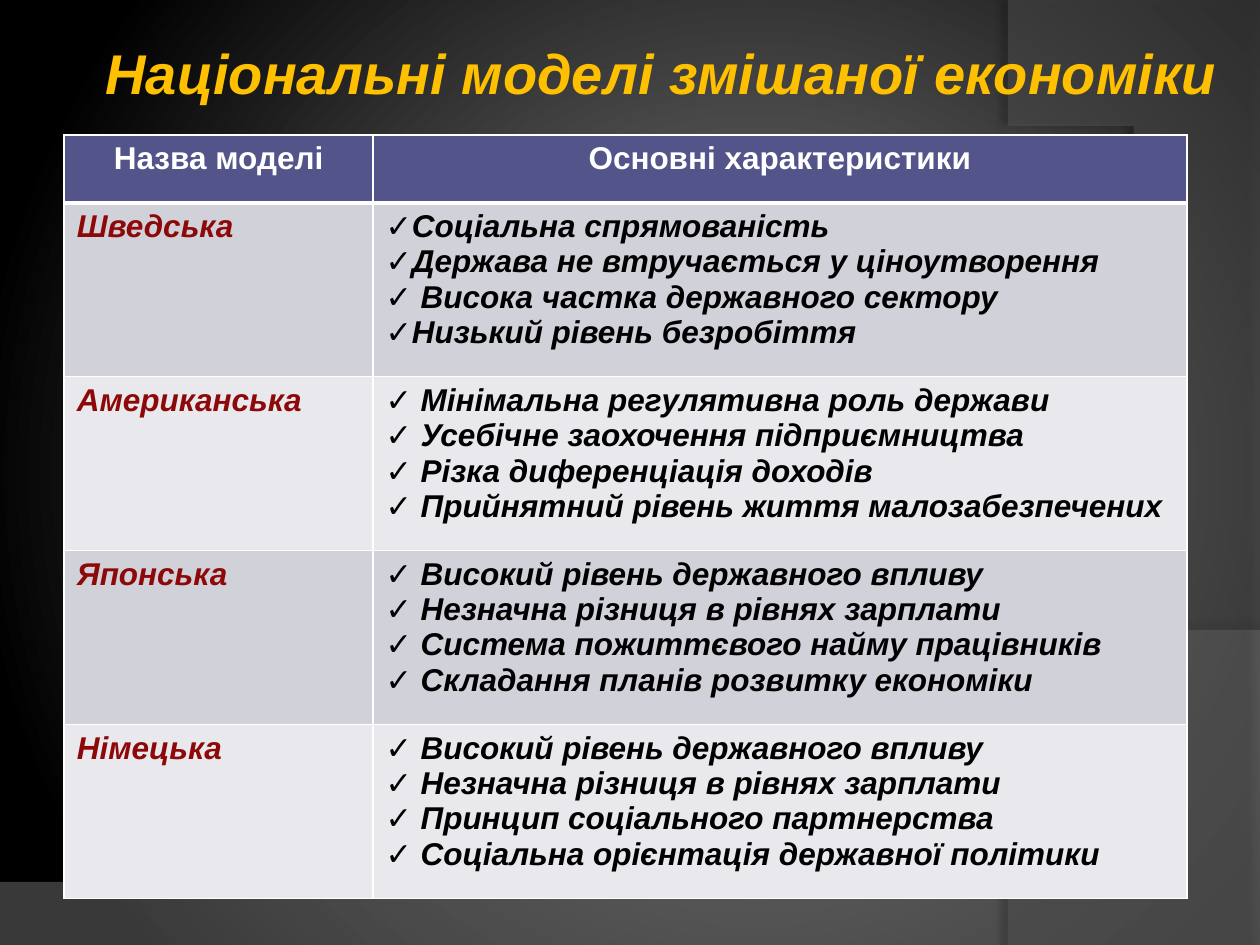
from lxml import etree
from pptx import Presentation
from pptx.dml.color import RGBColor
from pptx.enum.text import MSO_ANCHOR, PP_ALIGN
from pptx.oxml.ns import qn
from pptx.util import Inches, Pt

CENTER, LEFT = PP_ALIGN.CENTER, PP_ALIGN.LEFT
MIDDLE = MSO_ANCHOR.MIDDLE
FONT = "Arial"
COLORS = {
    "glow": "848484", "black": "000000", "wave": "7F7F7F", "arc": "5E5E5E",
    "title": "FFC000", "header": "53548A", "white": "FFFFFF",
    "model": "8D0909", "odd": "D1D1DA", "even": "E9E9ED",
}
HEADERS = ["Назва моделі", "Основні характеристики"]
MODELS = [
    ("Шведська", ["Соціальна спрямованість",
                  "Держава не втручається у ціноутворення",
                  " Висока частка державного сектору",
                  "Низький рівень безробіття"]),
    ("Американська", [" Мінімальна регулятивна роль держави",
                      " Усебічне заохочення підприємництва",
                      " Різка диференціація доходів",
                      " Прийнятний рівень життя малозабезпечених"]),
    ("Японська", [" Високий рівень державного впливу",
                  " Незначна різниця в рівнях зарплати",
                  " Система пожиттєвого найму працівників",
                  " Складання планів розвитку економіки"]),
    ("Німецька", [" Високий рівень державного впливу",
                  " Незначна різниця в рівнях зарплати",
                  " Принцип соціального партнерства",
                  " Соціальна орієнтація державної політики"]),
]


def rgb(name):
    return RGBColor.from_string(COLORS[name])


def add_xml(parent, tag, **attributes):
    values = {key: str(value) for key, value in attributes.items()}
    return etree.SubElement(parent, qn(tag), values)


def write_text(frame, lines, color, size=18, italic=False, align=LEFT, bullet=None):
    for index, line in enumerate(lines):
        para = frame.paragraphs[0] if index == 0 else frame.add_paragraph()
        para.alignment = align
        span = para.add_run()
        span.text = line
        span.font.name, span.font.size = FONT, Pt(size)
        span.font.bold, span.font.italic = True, italic
        span.font.color.rgb = rgb(color)
        if bullet:
            properties = para._p.get_or_add_pPr()
            add_xml(properties, "a:buFont", typeface=FONT)
            add_xml(properties, "a:buChar", char=bullet)


def curve(start, control_1, control_2, end, steps=40):
    """Points along a cubic curve, without its start."""
    points = []
    for step in range(1, steps + 1):
        t = step / steps
        weights = ((1 - t) ** 3, 3 * t * (1 - t) ** 2, 3 * t * t * (1 - t), t ** 3)
        corners = (start, control_1, control_2, end)
        points.append(tuple(sum(w * corner[axis] for w, corner in zip(weights, corners))
                            for axis in (0, 1)))
    return points


def add_sweep(page, points, color, opacity, shadow_opacity, blur, distance, direction):
    builder = page.shapes.build_freeform(*points[0], scale=float(Inches(1)))
    builder.add_line_segments(points[1:], close=True)
    shape = builder.convert_to_shape()
    shape.fill.solid()
    shape.fill.fore_color.rgb = rgb(color)
    shape.line.fill.background()
    fill_color = shape._element.spPr.find(qn("a:solidFill"))[0]
    add_xml(fill_color, "a:alpha", val=opacity * 1000)
    effects = add_xml(shape._element.spPr, "a:effectLst")
    shadow = add_xml(effects, "a:outerShdw", blurRad=Pt(blur), dist=Pt(distance),
                     dir=direction * 60000, algn="ctr", rotWithShape=0)
    shadow_color = add_xml(shadow, "a:srgbClr", val=COLORS["black"])
    add_xml(shadow_color, "a:alpha", val=shadow_opacity * 1000)


def draw_background(page, width, height):
    # Radial glow
    fill = page.background.fill
    fill.gradient()
    for stop, color, position in zip(fill.gradient_stops, ("glow", "black"), (0, 1)):
        stop.color.rgb = rgb(color)
        stop.position = position
    gradient = page._element.find(".//" + qn("a:gradFill"))
    gradient.remove(gradient.find(qn("a:lin")))
    circle = etree.Element(qn("a:path"), {"path": "circle"})
    gradient.find(qn("a:gsLst")).addnext(circle)
    add_xml(circle, "a:fillToRect", l=60000, t=50000, r=40000, b=50000)

    # Bottom wave and right-hand arc
    wave = [(0, 7.05), (0, height), (width, height), (width, 5.2)]
    wave += curve((width, 5.2), (5.59, 7.29), (3.91, 7.19), (0, 7.05))
    add_sweep(page, wave, "wave", 45, 35, 4, 3.5, 270)
    arc = [(width, 0.02), (width, height), (8.21, height)]
    arc += curve((8.21, height), (9.35, 6.19), (10.18, 3), (8, 0))
    add_sweep(page, arc, "arc", 40, 45, 4, 4, 180)


def place_title(page, left, top, width, height):
    title = page.shapes.title
    title.left, title.top = Inches(left), Inches(top)
    title.width, title.height = Inches(width), Inches(height)
    frame = title.text_frame
    frame.vertical_anchor, frame.word_wrap = MIDDLE, True
    frame.margin_left = frame.margin_right = Inches(0.05)
    frame.margin_top = frame.margin_bottom = Inches(0.05)
    write_text(frame, ["Національні моделі змішаної економіки"], "title",
               size=32, italic=True, align=CENTER)
    page.shapes._spTree.append(title._element)  # in front of the sweeps


def style_cell(cell, fill, top=1, bottom=1):
    properties = cell._tc.get_or_add_tcPr()
    for side, weight in (("L", 1), ("R", 1), ("T", top), ("B", bottom)):
        line = add_xml(properties, "a:ln" + side, w=Pt(weight))
        add_xml(add_xml(line, "a:solidFill"), "a:srgbClr", val=COLORS["white"])
    cell.fill.solid()
    cell.fill.fore_color.rgb = rgb(fill)


def place_table(page, left, top, width, height):
    name_width, header_height = 2.45, 0.54
    row_height = (height - header_height) / len(MODELS)
    table = page.shapes.add_table(len(MODELS) + 1, 2, Inches(left), Inches(top),
                                  Inches(width), Inches(height)).table
    table.columns[0].width = Inches(name_width)
    table.columns[1].width = Inches(width - name_width)
    table.rows[0].height = Inches(header_height)

    # Header row
    for column, heading in enumerate(HEADERS):
        cell = table.cell(0, column)
        style_cell(cell, "header", bottom=3)
        write_text(cell.text_frame, [heading], "white", align=CENTER)

    # One row for each model
    for row, (model, features) in enumerate(MODELS, start=1):
        table.rows[row].height = Inches(row_height)
        name_cell, feature_cell = table.cell(row, 0), table.cell(row, 1)
        for cell in (name_cell, feature_cell):
            style_cell(cell, "odd" if row % 2 else "even", top=3 if row == 1 else 1)
        write_text(name_cell.text_frame, [model], "model", italic=True)
        write_text(feature_cell.text_frame, features, "black", italic=True, bullet="✓")


def main():
    deck = Presentation()
    deck.slide_width, deck.slide_height = Inches(10), Inches(7.5)
    page = deck.slides.add_slide(deck.slide_layouts[5])
    draw_background(page, 10, 7.5)
    place_title(page, 0.5, 0, 9.5, 1.15)
    place_table(page, 0.51, 1.07, 8.91, 6.06)
    deck.save("out.pptx")


if __name__ == "__main__":
    main()
